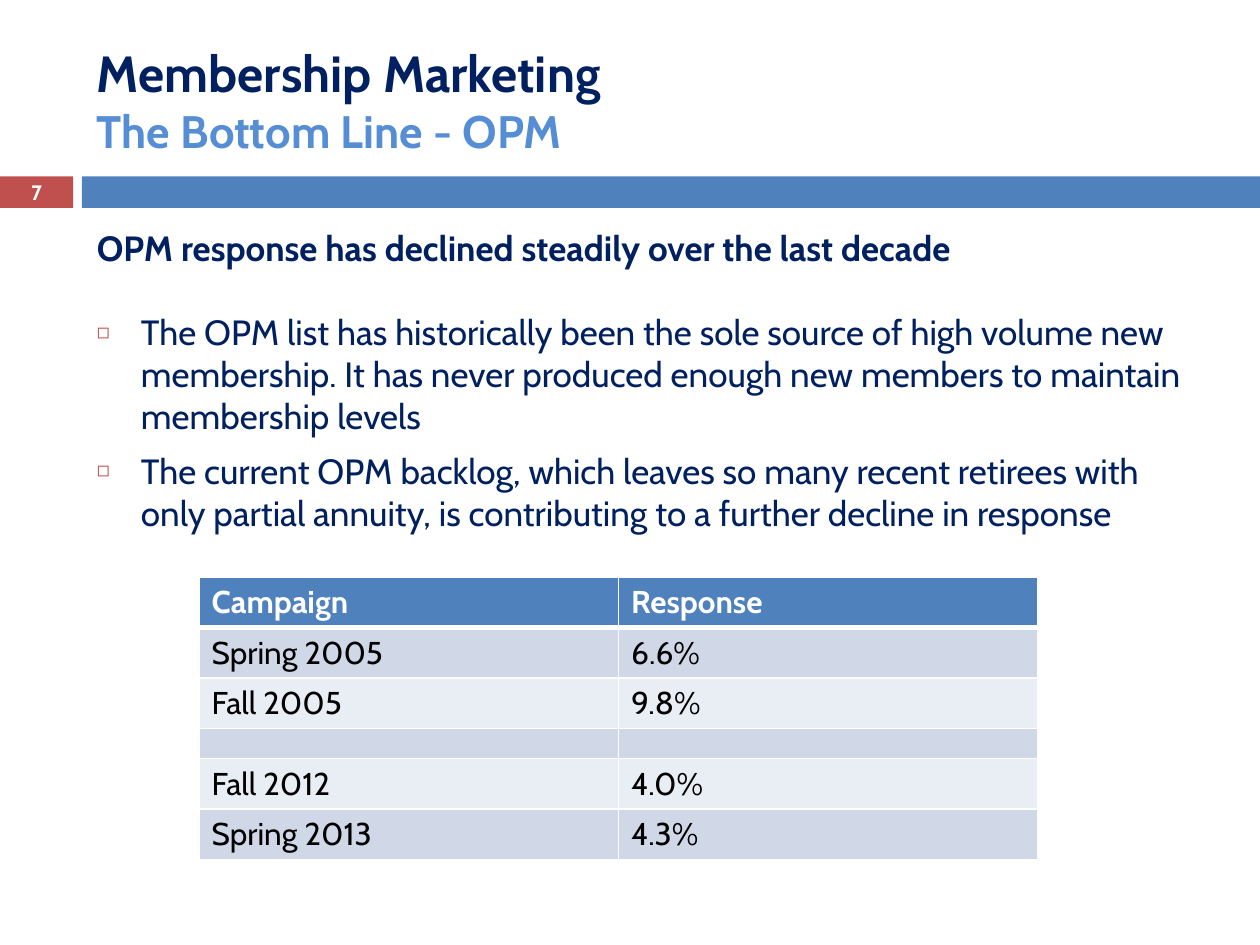
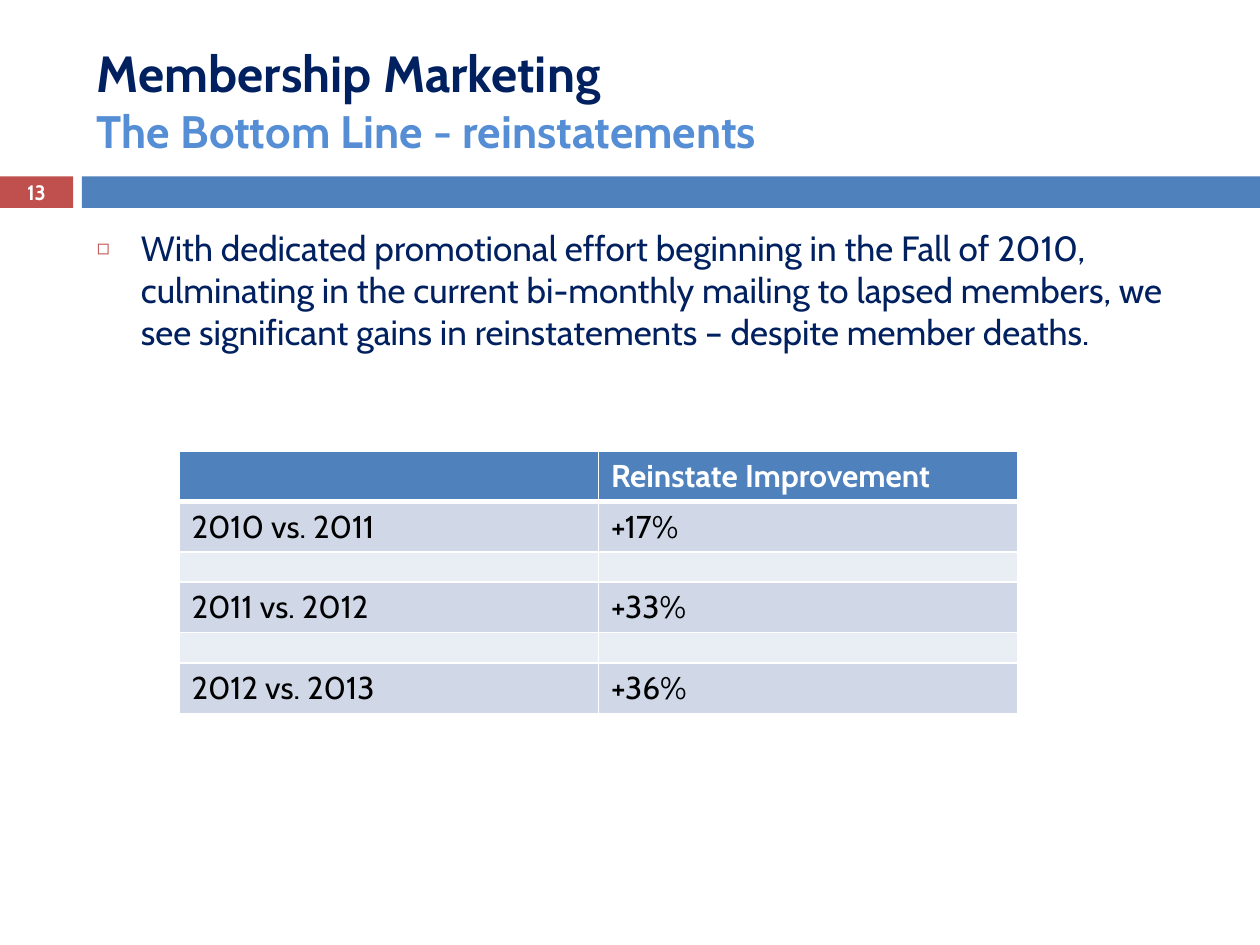
from dataclasses import dataclass

from lxml import etree
from pptx import Presentation
from pptx.dml.color import RGBColor
from pptx.enum.shapes import MSO_SHAPE
from pptx.enum.text import MSO_ANCHOR, PP_ALIGN
from pptx.oxml.ns import qn
from pptx.slide import Slide
from pptx.text.text import TextFrame
from pptx.util import Inches, Pt

RECTANGLE = MSO_SHAPE.RECTANGLE
MIDDLE, TOP = MSO_ANCHOR.MIDDLE, MSO_ANCHOR.TOP
CENTER, LEFT = PP_ALIGN.CENTER, PP_ALIGN.LEFT


@dataclass(frozen=True)
class Theme:
    font: str = "Cabin"
    navy: str = "002060"
    sky: str = "558ED5"
    blue: str = "4F81BD"
    red: str = "C0504D"
    white: str = "FFFFFF"
    black: str = "000000"
    row_bands: tuple[str, str] = ("D0D8E8", "E9EDF4")
    title_size: float = 29
    subtitle_size: float = 26
    body_size: float = 20
    table_size: float = 18
    number_size: float = 11.9
    blank_size: float = 8


THEME = Theme()


@dataclass(frozen=True)
class Box:
    left: float
    top: float
    width: float
    height: float

    def lengths(self) -> tuple[int, int, int, int]:
        return (Inches(self.left), Inches(self.top),
                Inches(self.width), Inches(self.height))


# Shared layout
TITLE_BOX = Box(0.67, 0.25, 8.92, 1.08)
NUMBER_BAND = Box(0, 1.4, 0.58, 0.25)
TITLE_BAND = Box(0.65, 1.4, 9.35, 0.25)
NUMBER_BOX = Box(0, 1.39, 0.58, 0.27)
BODY_BOX = Box(0.67, 1.75, 8.92, 4.92)
COLUMN_WIDTH = 3.33
ROW_HEIGHT, BLANK_ROW_HEIGHT = 0.4, 0.24
BULLET_INDENT = Inches(0.35)
BULLET_PERCENT = 60


@dataclass(frozen=True)
class BodyLine:
    text: str
    bullet: bool = True
    space_before: float = 7


@dataclass(frozen=True)
class SlideContent:
    number: int
    subtitle: str
    body: list[BodyLine]
    table_left: float
    table_top: float
    rows: list[tuple[str, str]]


SLIDES = [
    SlideContent(
        7, "The Bottom Line - OPM",
        [
            BodyLine("OPM response has declined steadily over the last decade",
                     bullet=False),
            BodyLine("The OPM list has historically been the sole source of "
                     "high volume new membership. It has never produced enough "
                     "new members to maintain membership levels",
                     space_before=24),
            BodyLine("The current OPM backlog, which leaves so many recent "
                     "retirees with only partial annuity, is contributing to "
                     "a further decline in response"),
        ],
        1.58, 4.58,
        [("Campaign", "Response"), ("Spring 2005", "6.6%"),
         ("Fall 2005", "9.8%"), ("", ""),
         ("Fall 2012", "4.0%"), ("Spring 2013", "4.3%")],
    ),
    SlideContent(
        13, "The Bottom Line - reinstatements",
        [
            BodyLine("With dedicated promotional effort beginning in the Fall "
                     "of 2010, culminating in the current bi-monthly mailing "
                     "to lapsed members, we see significant gains in "
                     "reinstatements – despite member deaths."),
        ],
        1.42, 3.58,
        [("", "Reinstate Improvement"), ("2010 vs. 2011", "+17%"), ("", ""),
         ("2011 vs. 2012", "+33%"), ("", ""), ("2012 vs. 2013", "+36%")],
    ),
]


# Text helpers
def add_run(paragraph, text: str, size: float, color: str,
            bold: bool = False) -> None:
    run = paragraph.add_run()
    run.text = text
    run.font.name = THEME.font
    run.font.size = Pt(size)
    run.font.bold = bold
    run.font.color.rgb = RGBColor.from_string(color)


def add_text_box(slide: Slide, box: Box, anchor=TOP) -> TextFrame:
    frame = slide.shapes.add_textbox(*box.lengths()).text_frame
    frame.word_wrap = True
    frame.vertical_anchor = anchor
    return frame


def add_bullet(paragraph) -> None:
    properties = paragraph._p.get_or_add_pPr()
    properties.set("marL", str(BULLET_INDENT))
    properties.set("indent", str(-BULLET_INDENT))
    color = etree.SubElement(properties, qn("a:buClr"))
    etree.SubElement(color, qn("a:srgbClr"), val=THEME.red)
    etree.SubElement(properties, qn("a:buSzPct"), val=str(BULLET_PERCENT * 1000))
    etree.SubElement(properties, qn("a:buFont"), typeface=THEME.font)
    etree.SubElement(properties, qn("a:buChar"), char="◻")


# Slide parts
def add_band(slide: Slide, box: Box, color: str) -> None:
    band = slide.shapes.add_shape(RECTANGLE, *box.lengths())
    band.shadow.inherit = False
    band.fill.solid()
    band.fill.fore_color.rgb = RGBColor.from_string(color)
    band.line.fill.background()


def add_header(slide: Slide, content: SlideContent) -> None:
    add_band(slide, NUMBER_BAND, THEME.red)
    add_band(slide, TITLE_BAND, THEME.blue)

    title = add_text_box(slide, TITLE_BOX, MIDDLE).paragraphs[0]
    add_run(title, "Membership Marketing", THEME.title_size, THEME.navy, True)
    title.add_line_break()
    add_run(title, content.subtitle, THEME.subtitle_size, THEME.sky, True)

    number = add_text_box(slide, NUMBER_BOX, MIDDLE).paragraphs[0]
    number.alignment = CENTER
    add_run(number, str(content.number), THEME.number_size, THEME.white, True)


def add_body(slide: Slide, lines: list[BodyLine]) -> None:
    frame = add_text_box(slide, BODY_BOX)
    for index, line in enumerate(lines):
        paragraph = frame.add_paragraph() if index else frame.paragraphs[0]
        paragraph.alignment = LEFT
        paragraph.space_before = Pt(line.space_before)
        if line.bullet:
            add_bullet(paragraph)
        add_run(paragraph, line.text, THEME.body_size, THEME.navy,
                bold=not line.bullet)


def set_borders(cell, top: float, bottom: float) -> None:
    properties = cell._tc.get_or_add_tcPr()
    for side, width in (("L", 1), ("R", 1), ("T", top), ("B", bottom)):
        line = etree.SubElement(properties, qn(f"a:ln{side}"), w=str(Pt(width)))
        fill = etree.SubElement(line, qn("a:solidFill"))
        etree.SubElement(fill, qn("a:srgbClr"), val=THEME.white)


def fill_cell(cell, text: str, row_index: int) -> None:
    header = row_index == 0
    set_borders(cell, top=3 if row_index == 1 else 1, bottom=3 if header else 1)
    color = THEME.blue if header else THEME.row_bands[(row_index - 1) % 2]
    cell.fill.solid()
    cell.fill.fore_color.rgb = RGBColor.from_string(color)
    paragraph = cell.text_frame.paragraphs[0]
    if text:
        add_run(paragraph, text, THEME.table_size,
                THEME.white if header else THEME.black, header)
    else:
        # A small end mark keeps the spacer rows low
        etree.SubElement(paragraph._p, qn("a:endParaRPr"),
                         sz=str(THEME.blank_size * 100))


def add_results_table(slide: Slide, content: SlideContent) -> None:
    rows = content.rows
    heights = [ROW_HEIGHT if any(row) else BLANK_ROW_HEIGHT for row in rows]
    columns = len(rows[0])
    box = Box(content.table_left, content.table_top,
              columns * COLUMN_WIDTH, sum(heights))
    table = slide.shapes.add_table(len(rows), columns, *box.lengths()).table
    for column in table.columns:
        column.width = Inches(COLUMN_WIDTH)
    for row_index, (row, height) in enumerate(zip(rows, heights)):
        table.rows[row_index].height = Inches(height)
        for column_index, text in enumerate(row):
            fill_cell(table.cell(row_index, column_index), text, row_index)


def main() -> None:
    presentation = Presentation()
    presentation.slide_width = Inches(10)
    presentation.slide_height = Inches(7.5)
    blank_layout = presentation.slide_layouts[6]
    for content in SLIDES:
        slide = presentation.slides.add_slide(blank_layout)
        add_header(slide, content)
        add_body(slide, content.body)
        add_results_table(slide, content)
    presentation.save("out.pptx")


if __name__ == "__main__":
    main()
